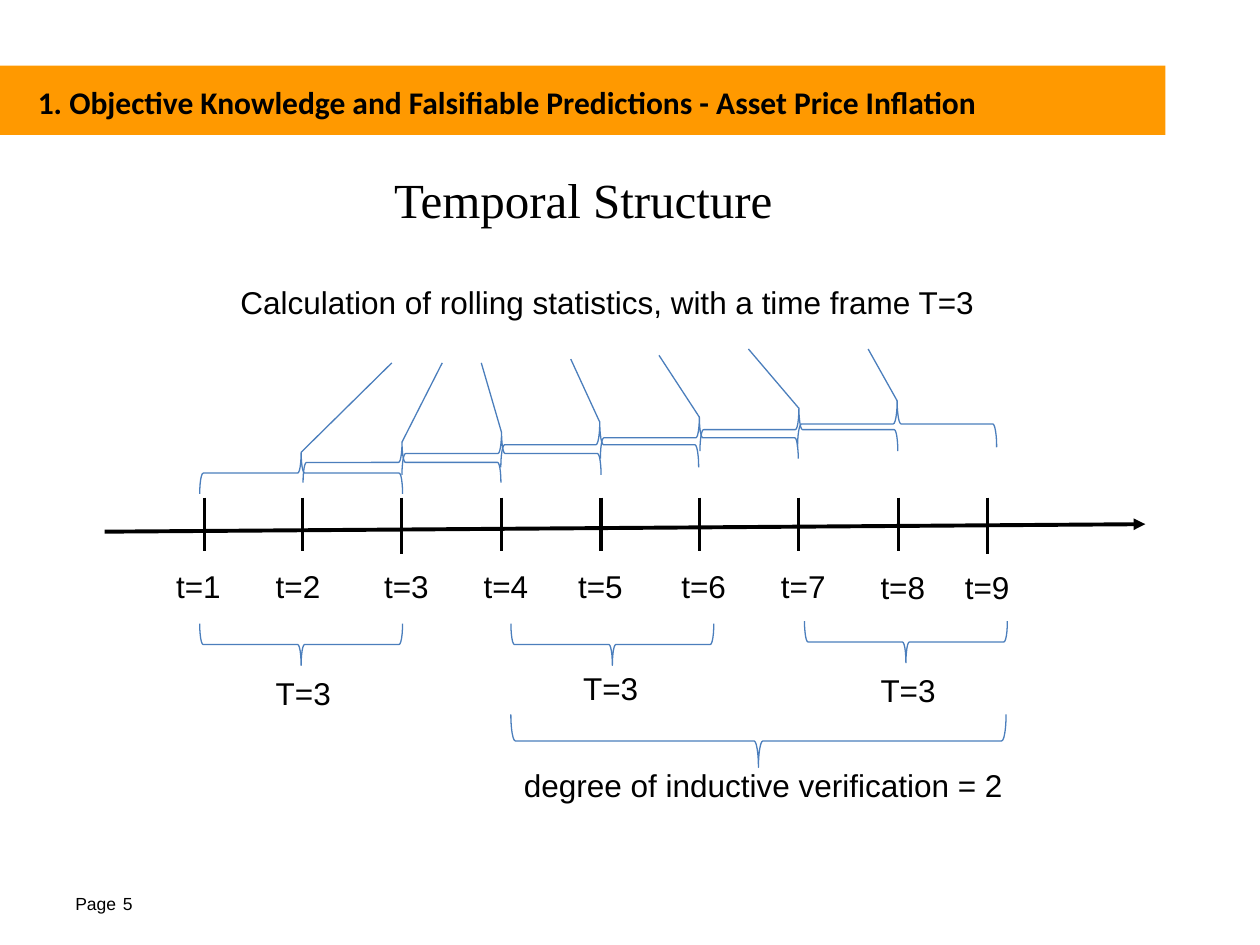
from lxml import etree
from pptx import Presentation
from pptx.dml.color import RGBColor
from pptx.enum.shapes import MSO_CONNECTOR, MSO_SHAPE
from pptx.enum.text import MSO_ANCHOR, MSO_AUTO_SIZE, PP_ALIGN
from pptx.oxml.ns import qn
from pptx.util import Inches, Pt

COLORS = {"band": "FF9900", "ink": "000000", "brace": "4B7EBC"}
HEADING = "1. Objective Knowledge and Falsifiable Predictions - Asset Price Inflation"

# Captions: text, left, top, width, height, size, font
CAPTIONS = [
    ("Temporal Structure", 3.03, 1.3, 3.24, 0.57, 28, "Times New Roman"),
    ("Calculation of rolling statistics, with a time frame T=3",
     1.81, 2.2, 6.08, 0.4, 18, "Arial"),
    ("degree of inductive verification = 2", 4.06, 6.03, 4.04, 0.4, 18, "Arial"),
]
# Time steps: tick x, tick bottom, label left, label top
STEPS = [
    (1.62, 4.37, 1.3, 4.45), (2.4, 4.37, 2.09, 4.45), (3.19, 4.4, 2.95, 4.45),
    (3.98, 4.37, 3.74, 4.45), (4.77, 4.37, 4.49, 4.45), (5.55, 4.37, 5.31, 4.45),
    (6.34, 4.37, 6.1, 4.45), (7.13, 4.37, 6.89, 4.46), (7.84, 4.4, 7.56, 4.46),
]
# Rolling windows: peak x, peak y, depth, span, pointer end x, pointer end y
WINDOWS = [
    (2.39, 3.59, 0.33, 1.61, 3.11, 2.88), (3.19, 3.51, 0.32, 1.57, 3.51, 2.88),
    (3.98, 3.43, 0.34, 1.58, 3.82, 2.88), (4.76, 3.35, 0.36, 1.57, 4.53, 2.85),
    (5.55, 3.31, 0.33, 1.57, 5.23, 2.82), (6.34, 3.24, 0.34, 1.57, 5.94, 2.77),
    (7.12, 3.18, 0.37, 1.58, 6.89, 2.77),
]
# Separate frames: brace centre x, brace top, label left, label top
FRAMES = [(2.39, 4.95, 2.09, 5.3), (4.86, 4.95, 4.53, 5.26), (7.19, 4.93, 6.89, 5.28)]

deck = Presentation()
deck.slide_width, deck.slide_height = Inches(10), Inches(7.5)
slide = deck.slides.add_slide(deck.slide_layouts[5])
shapes = slide.shapes


def rgb(name):
    return RGBColor.from_string(COLORS[name])


def style(run, size, font="Arial", bold=False):
    run.font.size, run.font.name, run.font.bold = Pt(size), font, bold
    run.font.color.rgb = rgb("ink")


def label(text, x, y, w, h=0.4, size=18, font="Arial"):
    box = shapes.add_textbox(Inches(x), Inches(y), Inches(w), Inches(h))
    frame = box.text_frame
    frame.word_wrap = False
    frame.text = text
    style(frame.paragraphs[0].runs[0], size, font)
    return box


def line(x1, y1, x2, y2, color="ink", width=1.75):
    item = shapes.add_connector(MSO_CONNECTOR.STRAIGHT, Inches(x1), Inches(y1),
                                Inches(x2), Inches(y2))
    item.line.color.rgb, item.line.width = rgb(color), Pt(width)
    etree.SubElement(item._element.spPr, qn("a:effectLst"))
    return item


def brace(mid, top, depth, span, turn):
    """Place a brace lying on its side by the box it covers once turned."""
    item = shapes.add_shape(MSO_SHAPE.LEFT_BRACE, Inches(mid - depth / 2),
                            Inches(top + depth / 2 - span / 2), Inches(depth), Inches(span))
    item.rotation = turn
    item.shadow.inherit = False
    item.fill.background()
    item.line.color.rgb, item.line.width = rgb("brace"), Pt(0.75)


# Heading band, kept behind the title
band = shapes.add_shape(MSO_SHAPE.RECTANGLE, 0, Inches(0.52), Inches(9.25), Inches(0.55))
band.shadow.inherit = False
band.fill.solid()
band.fill.fore_color.rgb = rgb("band")
band.line.fill.background()
title = shapes.title
band._element.addnext(title._element)
title.left, title.top, title.width, title.height = map(Inches, (0.2, 0.68, 7.72, 0.33))
frame = title.text_frame
frame.text = HEADING
frame.word_wrap, frame.auto_size = False, MSO_AUTO_SIZE.NONE
frame.vertical_anchor = MSO_ANCHOR.TOP
para = frame.paragraphs[0]
para.alignment, para.line_spacing = PP_ALIGN.LEFT, 0.75
style(para.runs[0], 18, "Calibri", True)

# Page number
page = label("Page", 0.5, 6.95, 2.33, size=10).text_frame
page.word_wrap, page.vertical_anchor = True, MSO_ANCHOR.MIDDLE
for text, size in ((" ", 14), ("5", 10)):
    run = page.paragraphs[0].add_run()
    run.text = text
    style(run, size)

for caption in CAPTIONS:
    label(*caption)

# Time axis with ticks
axis = line(0.83, 4.22, 9.09, 4.16, width=2.25)
etree.SubElement(axis.line._get_or_add_ln(), qn("a:tailEnd"), type="triangle")
for step, (x, bottom, left, top) in enumerate(STEPS, 1):
    line(x, 3.95, x, bottom)
    label(f"t={step}", left, top, 0.56)

# Rolling windows above the axis
for x, y, depth, span, endx, endy in WINDOWS:
    brace(x, y, depth, span, 90)
    line(x, y, endx, endy, "brace", 0.75)

# Separate frames below the axis, and the brace that joins two of them
for mid, top, left, below in FRAMES:
    brace(mid, top, 0.33, 1.61, 270)
    label("T=3", left, below, 0.64)
brace(6.02, 5.67, 0.42, 3.93, 270)

deck.save("out.pptx")
